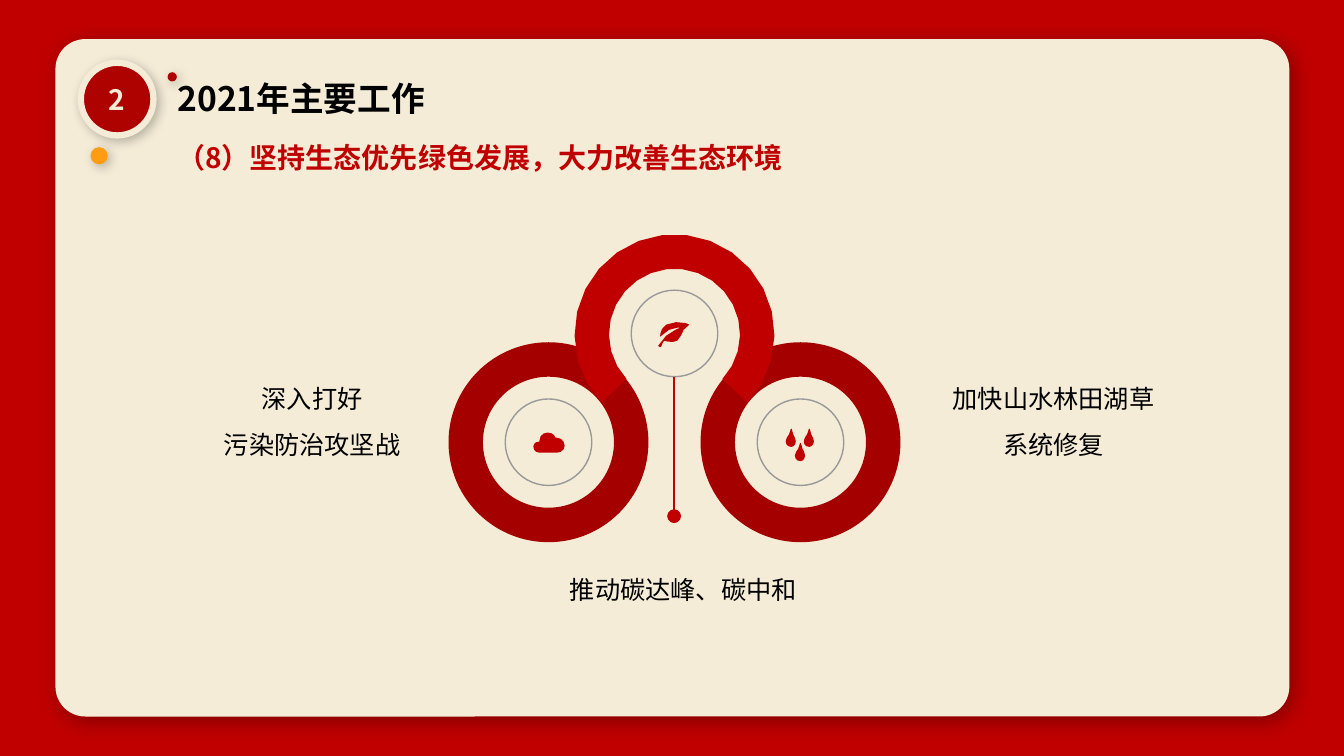
"""Build the slide on ecological priorities in the 2021 work plan."""
import math

import lxml.etree
import pptx
import pptx.dml.color
import pptx.enum.shapes
import pptx.enum.text
import pptx.oxml.ns
import pptx.util

COLS, ROWS = 32, 18
WIDTH, HEIGHT = pptx.util.Inches(13.33), pptx.util.Inches(7.5)
ICON_UNIT = pptx.util.Inches(0.01)
FONT = "Noto Sans CJK SC"
COLORS = {
    "red": "C00000", "ring": "A40000", "badge": "AE0201", "cream": "F4ECD7",
    "orange": "FF9C11", "grey": "999999", "black": "000000",
}
SHAPE = pptx.enum.shapes.MSO_SHAPE
ALIGN = pptx.enum.text.PP_ALIGN
CENTRE_COL, SIDE_STEP, ARCH_ROW, RING_ROW = 16.06, 3, 7.96, 10.53
OUTER, INNER = 2.38, 1.56

CLOUD = [(23, 5), (23, 5, 23, 5, 22, 5), (21, 2, 18, 0, 14, 0),
         (10, 0, 6, 3, 6, 8), (6, 8, 6, 9, 6, 9), (2, 9, 0, 11, 0, 14),
         (0, 17, 2, 20, 6, 20), (6, 20, 23, 20, 23, 20),
         (28, 20, 31, 17, 31, 13), (31, 9, 28, 5, 23, 5)]
LEAF = [(8, 5), (2, 9, 2, 15, 2, 17), (10, 7, 22, 8, 22, 8),
        (22, 8, 5, 14, 0, 26), (0, 26, 2, 28, 3, 27), (4, 23, 6, 21, 6, 21),
        (9, 22, 15, 23, 19, 21), (24, 17, 23, 9, 31, 5), (32, 4, 16, 0, 8, 5)]
DROP = [(5, 0), (4, 7, 0, 8, 0, 12), (0, 15, 2, 17, 5, 17),
        (7, 17, 9, 15, 9, 12), (9, 8, 6, 7, 5, 0)]


def x(col):
    return round(WIDTH * col / COLS)


def y(row):
    return round(HEIGHT * row / ROWS)


def rgb(name):
    return pptx.dml.color.RGBColor.from_string(COLORS[name])


def add_xml(parent, tag, **attrs):
    return lxml.etree.SubElement(parent, pptx.oxml.ns.qn(tag), attrs)


def paint(sp, fill=None, line=None, weight=1):
    sp.shadow.inherit = False
    if fill:
        sp.fill.solid()
        sp.fill.fore_color.rgb = rgb(fill)
    else:
        sp.fill.background()
    if line:
        sp.line.color.rgb = rgb(line)
        sp.line.width = pptx.util.Pt(weight)
    else:
        sp.line.fill.background()


def cast_shadow(sp, opacity, blur, distance):
    effects = sp._element.spPr.find(pptx.oxml.ns.qn("a:effectLst"))
    shadow = add_xml(effects, "a:outerShdw", blurRad=str(pptx.util.Pt(blur)),
                     dist=str(pptx.util.Pt(distance)), dir=str(45 * 60000),
                     algn="tl", rotWithShape="0")
    color = add_xml(shadow, "a:srgbClr", val=COLORS["black"])
    add_xml(color, "a:alpha", val=str(opacity * 1000))


def add_box(s, kind, box, **style):
    col, row, cols, rows = box
    sp = s.shapes.add_shape(kind, x(col), y(row), x(cols), y(rows))
    paint(sp, **style)
    return sp


def add_round(s, col, row, size, kind=SHAPE.OVAL, **style):
    return add_box(s, kind, (col - size / 2, row - size / 2, size, size), **style)


def write(tf, lines, size, color, align=None, bold=False, spacing=None):
    for i, line in enumerate(lines):
        p = tf.add_paragraph() if i else tf.paragraphs[0]
        p.text = line
        p.alignment = align
        p.line_spacing = spacing
        p.font.size = pptx.util.Pt(size)
        p.font.bold = bold
        p.font.color.rgb = rgb(color)
        p.font.name = FONT
        add_xml(p.font._element, "a:ea", typeface=FONT)


def add_text(s, box, lines, size, color, **style):
    col, row, cols, rows = box
    tf = s.shapes.add_textbox(x(col), y(row), x(cols), y(rows)).text_frame
    tf.word_wrap = True
    tf.auto_size = pptx.enum.text.MSO_AUTO_SIZE.SHAPE_TO_FIT_TEXT
    write(tf, lines, size, color, **style)


def add_outline(s, contours, **style):
    builder = None
    for first, *rest in contours:
        if builder is None:
            builder = s.shapes.build_freeform(*first)
        else:
            builder.move_to(*first)
        builder.add_line_segments(rest, close=True)
    paint(builder.convert_to_shape(), **style)


def icon_points(col, row, curves, steps=3):
    """Sample cubic curves as points placed at a grid position."""
    start, *cubics = curves
    points = [start]
    for cubic in cubics:
        knots = [points[-1], cubic[0:2], cubic[2:4], cubic[4:6]]
        for step in range(1, steps + 1):
            t = step / steps
            weights = [math.comb(3, k) * t**k * (1 - t)**(3 - k) for k in range(4)]
            points.append(tuple(sum(w * knot[axis] for w, knot in zip(weights, knots))
                                for axis in (0, 1)))
    return [(x(col) + px * ICON_UNIT, y(row) + py * ICON_UNIT) for px, py in points[:-1]]


def arc_points(radius, angles):
    return [(x(CENTRE_COL + radius * math.cos(math.radians(a))),
             y(ARCH_ROW + radius * math.sin(math.radians(a)))) for a in angles]


def add_header(s):
    for col, row, size, color in ((2.36, 3.71, 0.41, "orange"), (4.1, 1.83, 0.22, "badge")):
        cast_shadow(add_round(s, col, row, size, fill=color), 25, 8, 3)
    sp = add_round(s, 2.79, 2.36, 1.73, fill="badge", line="cream", weight=4.5)
    cast_shadow(sp, 25, 8, 3)
    tf = sp.text_frame
    tf.word_wrap = False
    tf.vertical_anchor = pptx.enum.text.MSO_ANCHOR.MIDDLE
    write(tf, ["2"], 20, "cream", align=ALIGN.CENTER, bold=True)
    add_text(s, (3.98, 3.22, 15.24, 1.06), ["（8）坚持生态优先绿色发展，大力改善生态环境"],
             20, "red", bold=True)
    add_text(s, (3.99, 1.73, 11.33, 1.2), ["2021年主要工作"], 24, "black", bold=True)


def add_rings(s):
    left, right = CENTRE_COL - SIDE_STEP, CENTRE_COL + SIDE_STEP
    for col in (right, left):
        sp = add_round(s, col, RING_ROW, 2 * OUTER, kind=SHAPE.DONUT, fill="ring")
        sp.adjustments[0] = (OUTER - INNER) / (2 * OUTER)
    sweep = range(137, 404, 14)
    arch = arc_points(OUTER, sweep) + arc_points(INNER, reversed(sweep))
    add_outline(s, [arch], fill="red")
    for col, row in ((left, RING_ROW), (right, RING_ROW), (CENTRE_COL, ARCH_ROW - 0.02)):
        add_round(s, col, row, 2.06, line="grey")


def add_pointer(s):
    line = s.shapes.add_connector(pptx.enum.shapes.MSO_CONNECTOR.STRAIGHT,
                                  x(16.05), y(8.98), x(16.05), y(12.29))
    line.line.color.rgb = rgb("red")
    line.line.width = pptx.util.Pt(1)
    add_xml(line.line._get_or_add_ln(), "a:tailEnd", type="oval", w="lg", len="lg")
    add_xml(line._element.spPr, "a:effectLst")


def add_icons(s):
    drops = [icon_points(col, row, DROP)
             for col, row in ((18.72, 10.22), (19.15, 10.22), (18.94, 10.56))]
    add_outline(s, drops, fill="red", line="red", weight=0.75)
    add_outline(s, [icon_points(15.67, 7.61, LEAF)], fill="red")
    add_outline(s, [icon_points(12.7, 10.3, CLOUD)], fill="red")


def main():
    prs = pptx.Presentation()
    prs.slide_width, prs.slide_height = WIDTH, HEIGHT
    s = prs.slides.add_slide(prs.slide_layouts[6])
    add_box(s, SHAPE.RECTANGLE, (0, 0, COLS, ROWS), fill="red")
    panel = add_box(s, SHAPE.ROUNDED_RECTANGLE, (1.32, 0.93, 29.38, 16.13), fill="cream")
    panel.adjustments[0] = 0.044
    cast_shadow(panel, 30, 15, 5)
    add_header(s)
    add_rings(s)
    add_pointer(s)
    for box, lines in (
        ((3.23, 8.66, 8.4, 2.42), ["深入打好", "污染防治攻坚战"]),
        ((20.61, 8.66, 8.95, 2.42), ["加快山水林田湖草", "系统修复"]),
        ((10.8, 13.2, 10.94, 1.32), ["推动碳达峰、碳中和"]),
    ):
        add_text(s, box, lines, 18, "black", align=ALIGN.CENTER, spacing=1.5)
    add_icons(s)
    prs.save("out.pptx")


if __name__ == "__main__":
    main()
